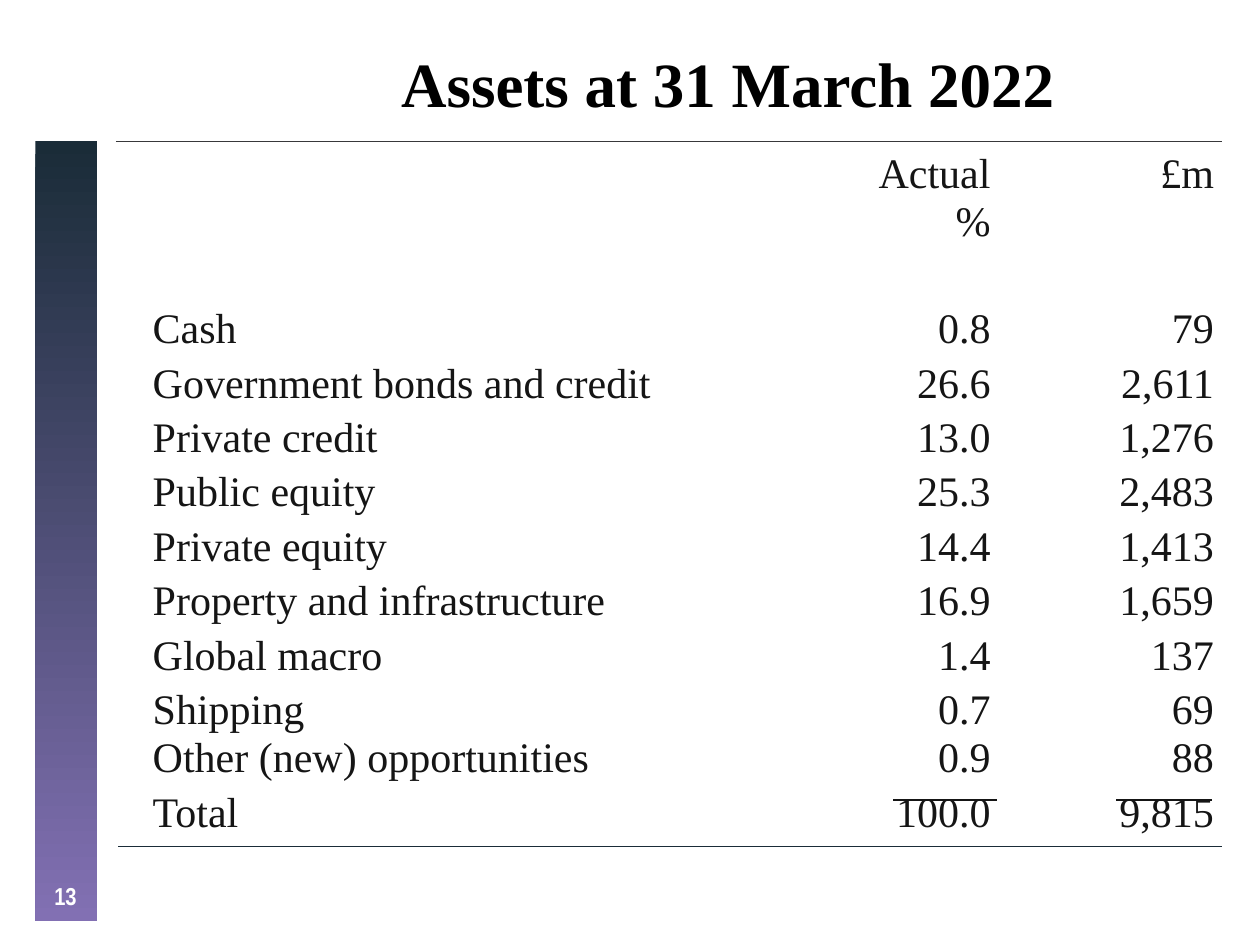
"""Builds the slide showing assets at 31 March 2022."""
from lxml.etree import SubElement
from pptx import Presentation
from pptx.dml.color import RGBColor
from pptx.enum.shapes import MSO_CONNECTOR, MSO_SHAPE
from pptx.enum.text import MSO_ANCHOR, MSO_AUTO_SIZE, PP_ALIGN
from pptx.oxml.ns import qn
from pptx.util import Pt

PLAIN_TABLE = "{2D5ABB26-0587-4C30-8999-92F81FD0307C}"
ROWS = [
    ("", "Actual\n%", "£m"),
    ("Cash", "0.8", "79"),
    ("Government bonds and credit", "26.6", "2,611"),
    ("Private credit", "13.0", "1,276"),
    ("Public equity", "25.3", "2,483"),
    ("Private equity", "14.4", "1,413"),
    ("Property and infrastructure", "16.9", "1,659"),
    ("Global macro", "1.4", "137"),
    ("Shipping\nOther (new) opportunities", "0.7\n0.9", "69\n88"),
    ("Total", "100.0", "9,815"),
]


def rgb(value):
    return RGBColor.from_string(value)


class Deck:
    serif, narrow = "Times New Roman", "Arial Narrow"
    ink, navy, violet, grey = "151515", "1A2C38", "8270B3", "38383A"

    def __init__(self, width, height):
        self.prs = Presentation()
        self.prs.slide_width, self.prs.slide_height = Pt(width), Pt(height)
        self.s = self.prs.slides.add_slide(self.prs.slide_layouts[5])

    def style(self, tf, size, font, color, align, bold=False):
        for i, p in enumerate(tf.paragraphs):
            p.alignment = align
            p.space_before = Pt(1 if i else 0)
            p.font.size = Pt(size)
            for r in p.runs:
                r.font.size, r.font.name, r.font.bold = Pt(size), font, bold
                r.font.color.rgb = rgb(color)

    def title(self, text, x, y, w, h):
        sp = self.s.shapes.title
        sp.left, sp.top, sp.width, sp.height = Pt(x), Pt(y), Pt(w), Pt(h)
        tf = sp.text_frame
        tf.text = text
        tf.auto_size = MSO_AUTO_SIZE.NONE
        tf.vertical_anchor = MSO_ANCHOR.MIDDLE
        tf.margin_left = tf.margin_right = tf.margin_top = tf.margin_bottom = 0
        self.style(tf, 36, self.serif, "000000", PP_ALIGN.CENTER, True)

    def line(self, x1, x2, y, color, weight):
        sp = self.s.shapes.add_connector(
            MSO_CONNECTOR.STRAIGHT, Pt(x1), Pt(y), Pt(x2), Pt(y))
        sp.line.color.rgb = rgb(color)
        sp.line.width = Pt(weight)
        SubElement(sp._element.spPr, qn("a:effectLst"))

    def band(self, x, y, w, h):
        sp = self.s.shapes.add_shape(MSO_SHAPE.RECTANGLE, Pt(x), Pt(y), Pt(w), Pt(h))
        sp.shadow.inherit = False
        sp.line.fill.background()
        sp.fill.gradient()
        sp.fill.gradient_angle = 270
        for stop, color, position in zip(
                sp.fill.gradient_stops, (self.navy, self.violet), (0, 1)):
            stop.color.rgb = rgb(color)
            stop.position = position

    def page_number(self, text, x, y, w, h):
        tf = self.s.shapes.add_textbox(Pt(x), Pt(y), Pt(w), Pt(h)).text_frame
        tf.text = text
        tf.word_wrap = True
        tf.vertical_anchor = MSO_ANCHOR.MIDDLE
        self.style(tf, 14, self.narrow, "FFFFFF", PP_ALIGN.CENTER, True)

    def table(self, rows, x, y, widths, heights):
        table = self.s.shapes.add_table(
            len(rows), len(widths), Pt(x), Pt(y),
            Pt(sum(widths)), Pt(sum(heights))).table
        table.first_row = table.horz_banding = False
        table._tbl.tblPr.find(qn("a:tableStyleId")).text = PLAIN_TABLE
        for column, width in zip(table.columns, widths):
            column.width = Pt(width)
        for i, (row, height) in enumerate(zip(rows, heights)):
            table.rows[i].height = Pt(height)
            for j, text in enumerate(row):
                cell = table.cell(i, j)
                cell.fill.background()
                cell.margin_left = cell.margin_right = Pt(4.5)
                cell.margin_top = cell.margin_bottom = 0
                cell.text_frame.text = text
                self.style(cell.text_frame, 24, self.serif, self.ink,
                           PP_ALIGN.RIGHT if j else PP_ALIGN.LEFT)


def main():
    deck = Deck(720, 540)
    deck.line(66.2, 698.4, 80.6, deck.grey, 0.5)
    deck.line(67.7, 698.4, 483.8, deck.navy, 0.5)
    deck.band(20.2, 80.6, 35.3, 445.7)
    deck.title("Assets at 31 March 2022", 133.2, 15.1, 565.2, 63.4)
    deck.page_number("13", 20.9, 499, 33.1, 25.2)
    heights = [88.6] + [31.1] * 7 + [58.5, 31.1]
    deck.table(ROWS, 82.8, 86.4, [360, 127.7, 127.7], heights)
    for x1, x2 in ((510.5, 569.5), (637.9, 692.6)):
        deck.line(x1, x2, 457.2, deck.ink, 1.5)
    deck.prs.save("out.pptx")


if __name__ == "__main__":
    main()
